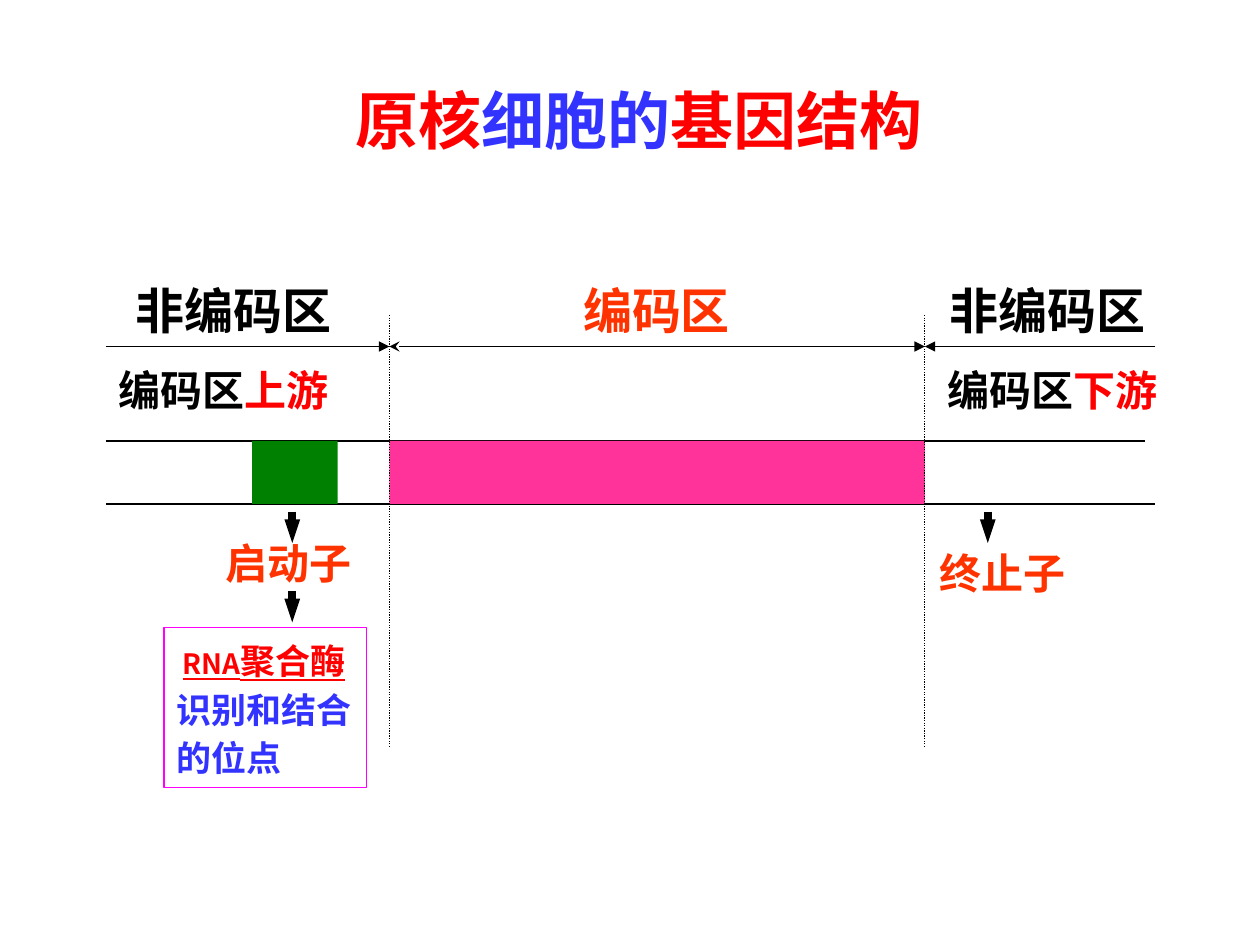
from lxml.etree import SubElement
from pptx import Presentation
from pptx.dml.color import RGBColor
from pptx.enum.dml import MSO_LINE
from pptx.enum.shapes import MSO_CONNECTOR, MSO_SHAPE
from pptx.enum.text import MSO_ANCHOR, MSO_AUTO_SIZE, PP_ALIGN
from pptx.oxml.ns import qn
from pptx.util import Inches, Pt

LATIN, CJK = "Times New Roman", "Noto Sans CJK SC"
BLACK, RED, BLUE, ORANGE = "000000", "FF0000", "3333FF", "FF3300"
MAGENTA, PINK, GREEN, WHITE = "FF00FF", "FF3399", "008000", "FFFFFF"

# Horizontal limits of the gene and of its coding region
LEFT, CODE_START, CODE_END, RIGHT = 0.84, 3.09, 7.34, 9.17
AXIS_Y, STRAND_TOP, STRAND_BOTTOM = 2.75, 3.5, 4
PROMOTER_X, TERMINATOR_X = 2.32, 7.84

TITLE = [("原核", RED), ("细胞的", BLUE), ("基因结构", RED)]

# left, top, width, height, size, runs
LABELS = [
    (0.98, 2.18, 1.89, 0.57, 28, [("非编码区", BLACK)]),
    (7.44, 2.18, 1.99, 0.57, 28, [("非编码区", BLACK)]),
    (4.53, 2.18, 1.5, 0.57, 28, [("编码区", ORANGE)]),
    (0.84, 2.84, 2.12, 0.5, 24, [("编码区", BLACK), ("上游", RED)]),
    (7.42, 2.84, 2.07, 0.5, 24, [("编码区", BLACK), ("下游", RED)]),
    (1.69, 4.22, 1.42, 0.5, 24, [("启动子", ORANGE)]),
    (7.36, 4.3, 1.42, 0.5, 24, [("终止子", ORANGE)]),
]

# text, size, colour, underlined
SITE_LINES = [
    [("RNA", 16, RED, True), ("聚合酶", 20, RED, True)],
    [("识别和结合", 20, BLUE, False)],
    [("的位点", 20, BLUE, False)],
]

# x1, y1, x2, y2, arrowhead at start, arrowhead at end
SPANS = [
    (LEFT, AXIS_Y, CODE_START, AXIS_Y, None, "triangle"),
    (RIGHT, AXIS_Y, CODE_END, AXIS_Y, None, "triangle"),
    (CODE_START, AXIS_Y, CODE_END, AXIS_Y, "stealth", "triangle"),
]
POINTERS = [(PROMOTER_X, 4.06), (TERMINATOR_X, 4.06), (PROMOTER_X, 4.69)]


def rgb(value):
    return RGBColor.from_string(value)


def add_run(p, text, size, color, latin=LATIN, underline=False):
    r = p.add_run()
    r.text = text
    r.font.size, r.font.bold, r.font.name = Pt(size), True, latin
    r.font.underline = underline
    r.font.color.rgb = rgb(color)
    SubElement(r.font._element, qn("a:ea")).set("typeface", CJK)


def add_line(s, x1, y1, x2, y2, head=None, tail=None, width=0.75, dash=None,
             head_width="med"):
    line = s.shapes.add_connector(
        MSO_CONNECTOR.STRAIGHT, Inches(x1), Inches(y1), Inches(x2), Inches(y2))
    line.line.color.rgb = rgb(BLACK)
    line.line.width = Pt(width)
    if dash:
        line.line.dash_style = dash
    ln = line.line._get_or_add_ln()
    for tag, kind in (("a:headEnd", head), ("a:tailEnd", tail)):
        if kind:
            end = SubElement(ln, qn(tag))
            end.set("type", kind)
            end.set("w", head_width)
    SubElement(line._element.spPr, qn("a:effectLst"))


def add_rect(s, left, top, width, height, fill, outline=None):
    sp = s.shapes.add_shape(MSO_SHAPE.RECTANGLE, Inches(left), Inches(top),
                            Inches(width), Inches(height))
    sp.shadow.inherit = False
    sp.fill.solid()
    sp.fill.fore_color.rgb = rgb(fill)
    if outline:
        sp.line.color.rgb = rgb(outline)
        sp.line.width = Pt(1)
    else:
        sp.line.fill.background()
    return sp


def add_title(s):
    title = s.shapes.title
    title.left, title.top = Inches(2.72), Inches(0.6)
    title.width, title.height = Inches(4.7), Inches(0.7)
    tf = title.text_frame
    tf.word_wrap, tf.auto_size = False, MSO_AUTO_SIZE.NONE
    tf.margin_left = tf.margin_right = 0
    for text, color in TITLE:
        add_run(tf.paragraphs[0], text, 36, color)


def add_label(s, left, top, width, height, size, runs):
    box = s.shapes.add_textbox(Inches(left), Inches(top),
                               Inches(width), Inches(height))
    tf = box.text_frame
    tf.word_wrap = True
    for text, color in runs:
        add_run(tf.paragraphs[0], text, size, color)


def add_site_box(s):
    tf = add_rect(s, 1.3, 4.98, 1.61, 1.27, WHITE, MAGENTA).text_frame
    tf.word_wrap, tf.vertical_anchor = False, MSO_ANCHOR.TOP
    for i, runs in enumerate(SITE_LINES):
        p = tf.add_paragraph() if i else tf.paragraphs[0]
        p.alignment, p.line_spacing = PP_ALIGN.LEFT, 1.15
        for text, size, color, underline in runs:
            add_run(p, text, size, color, CJK, underline)
    tf.paragraphs[0]._p.get_or_add_pPr().set("marL", str(Inches(0.05)))


def main():
    prs = Presentation()
    prs.slide_width, prs.slide_height = Inches(10), Inches(7.5)
    s = prs.slides.add_slide(prs.slide_layouts[5])
    add_title(s)

    add_line(s, LEFT, STRAND_TOP, 9.09, STRAND_TOP)
    add_line(s, LEFT, STRAND_BOTTOM, RIGHT, STRAND_BOTTOM)
    thickness = STRAND_BOTTOM - STRAND_TOP
    add_rect(s, CODE_START, STRAND_TOP, CODE_END - CODE_START, thickness, PINK)
    add_rect(s, 2, STRAND_TOP, 0.68, thickness, GREEN)

    for x in (CODE_START, CODE_END):
        add_line(s, x, 2.5, x, 5.92, dash=MSO_LINE.ROUND_DOT)
    for span in SPANS:
        add_line(s, *span)
    add_site_box(s)
    for label in LABELS:
        add_label(s, *label)
    for x, y in POINTERS:
        add_line(s, x, y, x, y + 0.25, tail="triangle", width=4.5,
                 head_width="sm")

    prs.save("out.pptx")


if __name__ == "__main__":
    main()
